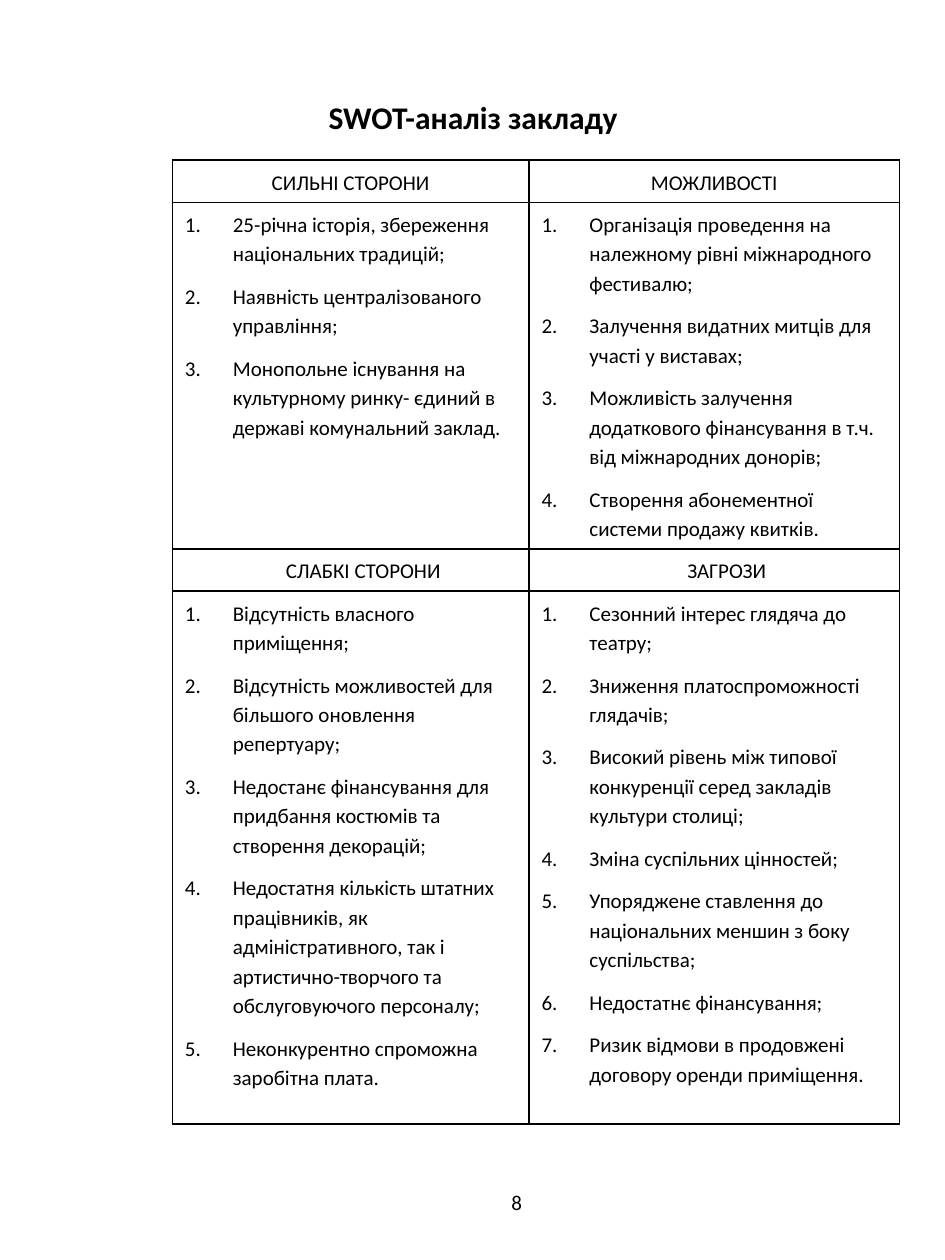
from dataclasses import dataclass

from lxml.etree import SubElement
from pptx import Presentation
from pptx.dml.color import RGBColor
from pptx.enum.text import MSO_ANCHOR as Anchor, PP_ALIGN as Align
from pptx.oxml import parse_xml
from pptx.oxml.ns import nsdecls, qn
from pptx.util import Pt

# Content
TITLE = "SWOT-аналіз закладу"
PAGE_NUMBER = "8"
QUADRANTS = [
    [
        ("СИЛЬНІ СТОРОНИ", [
            "25-річна історія, збереження національних традицій;",
            "Наявність централізованого управління;",
            "Монопольне існування на культурному ринку- єдиний в державі комунальний заклад.",
        ]),
        ("МОЖЛИВОСТІ", [
            "Організація проведення на належному рівні міжнародного фестивалю;",
            "Залучення видатних митців для участі у виставах;",
            "Можливість залучення додаткового фінансування в т.ч. від міжнародних донорів;",
            "Створення абонементної системи продажу квитків.",
        ]),
    ],
    [
        ("СЛАБКІ СТОРОНИ", [
            "Відсутність власного приміщення;",
            "Відсутність можливостей для більшого оновлення репертуару;",
            "Недостанє фінансування для придбання костюмів та створення декорацій;",
            "Недостатня кількість штатних працівників, як адміністративного, так і "
            "артистично-творчого та обслуговуючого персоналу;",
            "Неконкурентно спроможна заробітна плата.",
        ]),
        ("ЗАГРОЗИ", [
            "Сезонний інтерес глядяча до театру;",
            "Зниження платоспроможності глядачів;",
            "Високий рівень між типової конкуренції серед закладів культури столиці;",
            "Зміна суспільних цінностей;",
            "Упоряджене ставлення до національних меншин з боку суспільства;",
            "Недостатнє фінансування;",
            "Ризик відмови в продовжені договору оренди приміщення.",
        ]),
    ],
]


@dataclass(frozen=True)
class Theme:
    font: str = "Calibri"
    ink: str = "000000"
    title_size: float = 18
    body_size: float = 12
    border: float = 1
    line_spacing: float = 1.15
    space_after: float = 7.5
    list_indent: float = 27.36


THEME = Theme()

# Geometry in points
SLIDE_SIZE = (540, 720)
TITLE_BOX = (37.5, 38.2, 465.8, 57.6)
TABLE_ORIGIN = (98.5, 91.5)
COLUMN_WIDTHS = (203.8, 211.7)
HEADING_HEIGHT = 24.1
LIST_HEIGHTS = (198, 304.6)
HEADING_INDENTS = (0, 14.4)
PAGE_NUMBER_BOX = (285.1, 676.1, 23.8, 21.6)


def add_text(paragraph, text, size=THEME.body_size, bold=False):
    run = paragraph.add_run()
    run.text = text
    run.font.name = THEME.font
    run.font.size = Pt(size)
    run.font.bold = bold
    run.font.color.rgb = RGBColor.from_string(THEME.ink)


def set_spacing(paragraph):
    paragraph.line_spacing = THEME.line_spacing
    paragraph.space_after = Pt(THEME.space_after)


def fill_heading(cell, text, indent):
    paragraph = cell.text_frame.paragraphs[0]
    paragraph.alignment = Align.CENTER
    paragraph._p.get_or_add_pPr().set("indent", str(Pt(indent)))
    set_spacing(paragraph)
    add_text(paragraph, text)


def fill_list(cell, items):
    frame = cell.text_frame
    for index, item in enumerate(items):
        paragraph = frame.add_paragraph() if index else frame.paragraphs[0]
        properties = paragraph._p.get_or_add_pPr()
        properties.set("marL", str(Pt(THEME.list_indent)))
        properties.set("indent", str(-Pt(THEME.list_indent)))
        SubElement(properties, qn("a:buAutoNum"), type="arabicPeriod")
        set_spacing(paragraph)
        add_text(paragraph, item)


def style_cell(cell):
    cell.fill.background()
    properties = cell._tc.get_or_add_tcPr()
    for index, side in enumerate(("lnL", "lnR", "lnT", "lnB")):
        properties.insert(index, parse_xml(
            f'<a:{side} {nsdecls("a")} w="{Pt(THEME.border)}"><a:solidFill>'
            f'<a:srgbClr val="{THEME.ink}"/></a:solidFill></a:{side}>'))


presentation = Presentation()
presentation.slide_width, presentation.slide_height = map(Pt, SLIDE_SIZE)
slide = presentation.slides.add_slide(presentation.slide_layouts[5])

# Title
title = slide.shapes.title
title.left, title.top, title.width, title.height = map(Pt, TITLE_BOX)
title.text_frame.vertical_anchor = Anchor.MIDDLE
title_paragraph = title.text_frame.paragraphs[0]
title_paragraph.alignment = Align.CENTER
add_text(title_paragraph, TITLE, THEME.title_size, bold=True)

# SWOT table: a heading row and a list row for each pair of quadrants
row_heights = [height for list_height in LIST_HEIGHTS
               for height in (HEADING_HEIGHT, list_height)]
table = slide.shapes.add_table(
    len(row_heights), len(COLUMN_WIDTHS), *map(Pt, TABLE_ORIGIN),
    Pt(sum(COLUMN_WIDTHS)), Pt(sum(row_heights))).table
table.first_row = table.horz_banding = False
for column, width in zip(table.columns, COLUMN_WIDTHS):
    column.width = Pt(width)
for row, height in zip(table.rows, row_heights):
    row.height = Pt(height)
for pair_index, pair in enumerate(QUADRANTS):
    for column_index, (heading, items) in enumerate(pair):
        heading_cell = table.cell(2 * pair_index, column_index)
        list_cell = table.cell(2 * pair_index + 1, column_index)
        fill_heading(heading_cell, heading, HEADING_INDENTS[pair_index])
        fill_list(list_cell, items)
        style_cell(heading_cell)
        style_cell(list_cell)

# Page number
page_box = slide.shapes.add_textbox(*map(Pt, PAGE_NUMBER_BOX))
page_box.text_frame.word_wrap = True
add_text(page_box.text_frame.paragraphs[0], PAGE_NUMBER)

presentation.save("out.pptx")
